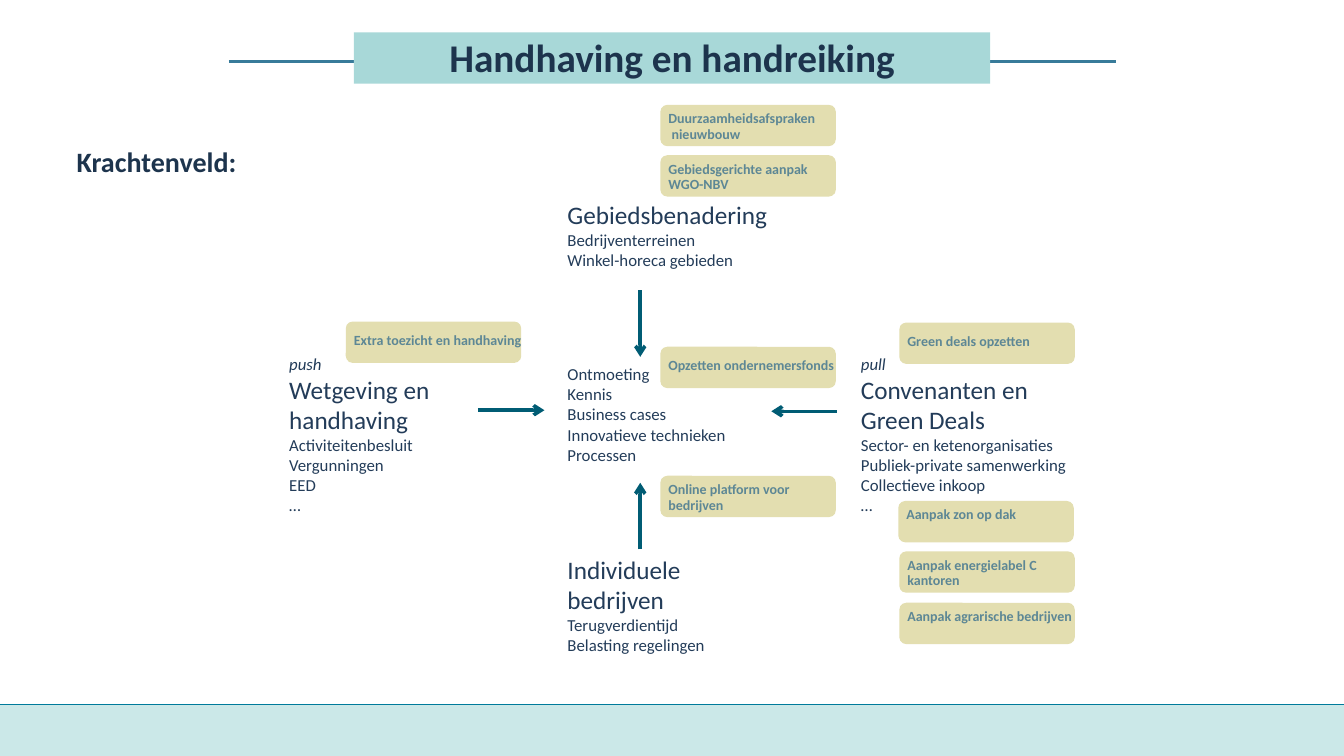
from lxml.etree import SubElement
from pptx import Presentation
from pptx.dml.color import RGBColor
from pptx.enum.shapes import MSO_CONNECTOR, MSO_SHAPE
from pptx.enum.text import MSO_ANCHOR, MSO_AUTO_SIZE, PP_ALIGN
from pptx.oxml.ns import qn
from pptx.util import Inches, Pt

FONT = "Calibri"
COLORS = {
    "footer": "CBE8E8", "footer_line": "007B9B",
    "title_band": "A8D8D8", "title_line": "387B9A", "title": "1D344D",
    "force": "233C59", "arrow": "005C74", "card": "E3DEB0", "card_text": "5D8795",
}
TITLE = "Handhaving en handreiking"
SUBTITLE = "Krachtenveld:"

# Forces: (left, top, width, height), label, heading, details
FORCES = [
    ((5.53, 1.93, 3.12, 1.01), None, "Gebiedsbenadering",
     ["Bedrijventerreinen", "Winkel-horeca gebieden"]),
    ((2.77, 3.46, 2.25, 1.72), "push", "Wetgeving en handhaving",
     ["Activiteitenbesluit", "Vergunningen", "EED", "…"]),
    ((8.44, 3.46, 2.25, 1.72), "pull", "Convenanten en Green Deals",
     ["Sector- en ketenorganisaties", "Publiek-private samenwerking",
      "Collectieve inkoop", "…"]),
    ((5.53, 5.45, 2.25, 1.11), None, "Individuele bedrijven",
     ["Terugverdientijd", "Belasting regelingen"]),
    ((5.53, 3.56, 3.12, 1.11), None, None,
     ["Ontmoeting", "Kennis", "Business cases", "Innovatieve technieken", "Processen"]),
]

# Arrows towards the centre: start and end
ARROWS = [
    ((6.35, 2.88), (6.35, 3.54)),
    ((6.35, 5.45), (6.35, 4.79)),
    ((8.30, 4.08), (7.65, 4.08)),
    ((4.74, 4.07), (5.40, 4.07)),
]

# Action cards: left, top, line spacing, lines
CARD_SIZE = (1.74, 0.41)
CARDS = [
    (3.43, 3.19, 0.9, ["Extra toezicht en handhaving"]),
    (8.92, 3.20, 0.9, ["Green deals opzetten"]),
    (6.55, 1.54, 0.5, ["Gebiedsgerichte aanpak", "WGO-NBV"]),
    (6.55, 1.04, 0.5, ["Duurzaamheidsafspraken", " nieuwbouw"]),
    (6.55, 4.72, 0.5, ["Online platform voor", "bedrijven"]),
    (6.55, 3.44, 0.9, ["Opzetten ondernemersfonds"]),
    (8.91, 4.97, 0.5, ["Aanpak zon op dak"]),
    (8.92, 5.98, 0.5, ["Aanpak agrarische bedrijven"]),
    (8.92, 5.47, 0.5, ["Aanpak energielabel C", "kantoren"]),
]

prs = Presentation()
prs.slide_width, prs.slide_height = Inches(13.33), Inches(7.5)
slide = prs.slides.add_slide(prs.slide_layouts[6])


def rgb(name):
    return RGBColor.from_string(COLORS[name])


def add_block(kind, box, color):
    block = slide.shapes.add_shape(kind, *map(Inches, box))
    block.shadow.inherit = False
    block.fill.solid()
    block.fill.fore_color.rgb = rgb(color)
    block.line.fill.background()
    return block


def add_line(start, end, color, width, arrow=False):
    line = slide.shapes.add_connector(MSO_CONNECTOR.STRAIGHT, *map(Inches, start + end))
    line.line.color.rgb = rgb(color)
    line.line.width = Pt(width)
    if arrow:
        SubElement(line.line._get_or_add_ln(), qn("a:tailEnd"), type="arrow")
    SubElement(line._element.spPr, qn("a:effectLst"))


def set_margins(frame, left=0, top=0, right=0, bottom=0):
    frame.margin_left, frame.margin_top = Inches(left), Inches(top)
    frame.margin_right, frame.margin_bottom = Inches(right), Inches(bottom)


def add_textbox(box):
    frame = slide.shapes.add_textbox(*map(Inches, box)).text_frame
    frame.word_wrap = True
    return frame


def write(frame, lines, color, spacing=None, before=0):
    """Write (text, size, bold, italic) lines, one paragraph each."""
    for i, (text, size, bold, italic) in enumerate(lines):
        paragraph = frame.add_paragraph() if i else frame.paragraphs[0]
        paragraph.alignment = PP_ALIGN.LEFT
        if spacing:
            paragraph.line_spacing = spacing
        if i and before:
            paragraph.space_before = Pt(before)
        run = paragraph.add_run()
        run.text = text
        run.font.name, run.font.size = FONT, Pt(size)
        run.font.bold, run.font.italic = bold, italic
        run.font.color.rgb = rgb(color)


# Footer
add_block(MSO_SHAPE.RECTANGLE, (0, 6.99, 13.33, 0.51), "footer")
add_line((13.33, 6.99), (0, 6.99), "footer_line", 1)

# Title and subtitle
add_line((2.27, 0.61), (11.07, 0.61), "title_line", 2.25)
title = add_block(MSO_SHAPE.RECTANGLE, (3.51, 0.32, 6.31, 0.51), "title_band").text_frame
set_margins(title, top=0.03)
title.vertical_anchor = MSO_ANCHOR.MIDDLE
write(title, [(TITLE, 28, True, False)], "title", 0.9)
title.paragraphs[0].alignment = PP_ALIGN.CENTER

subtitle = add_textbox((0.76, 1.47, 4.62, 0.4))
set_margins(subtitle)
write(subtitle, [(SUBTITLE, 20, True, False)], "title", 0.9)

# Forces
for box, label, heading, details in FORCES:
    force = add_textbox(box)
    force.auto_size = MSO_AUTO_SIZE.SHAPE_TO_FIT_TEXT
    lines = [(label, 12, False, True)] if label else []
    lines += [(heading, 18, False, False)] if heading else []
    lines += [(detail, 12, False, False) for detail in details]
    write(force, lines, "force")

# Arrows
for start, end in ARROWS:
    add_line(start, end, "arrow", 2.5, arrow=True)

# Action cards; the text area reaches past the card edge so long lines stay whole
for left, top, spacing, lines in CARDS:
    add_block(MSO_SHAPE.ROUNDED_RECTANGLE, (left, top) + CARD_SIZE, "card")
    action = add_textbox((left + 0.08, top + 0.12, CARD_SIZE[0], 0.22))
    set_margins(action)
    write(action, [(line, 10, True, False) for line in lines], "card_text", spacing, before=5)

prs.save("out.pptx")
